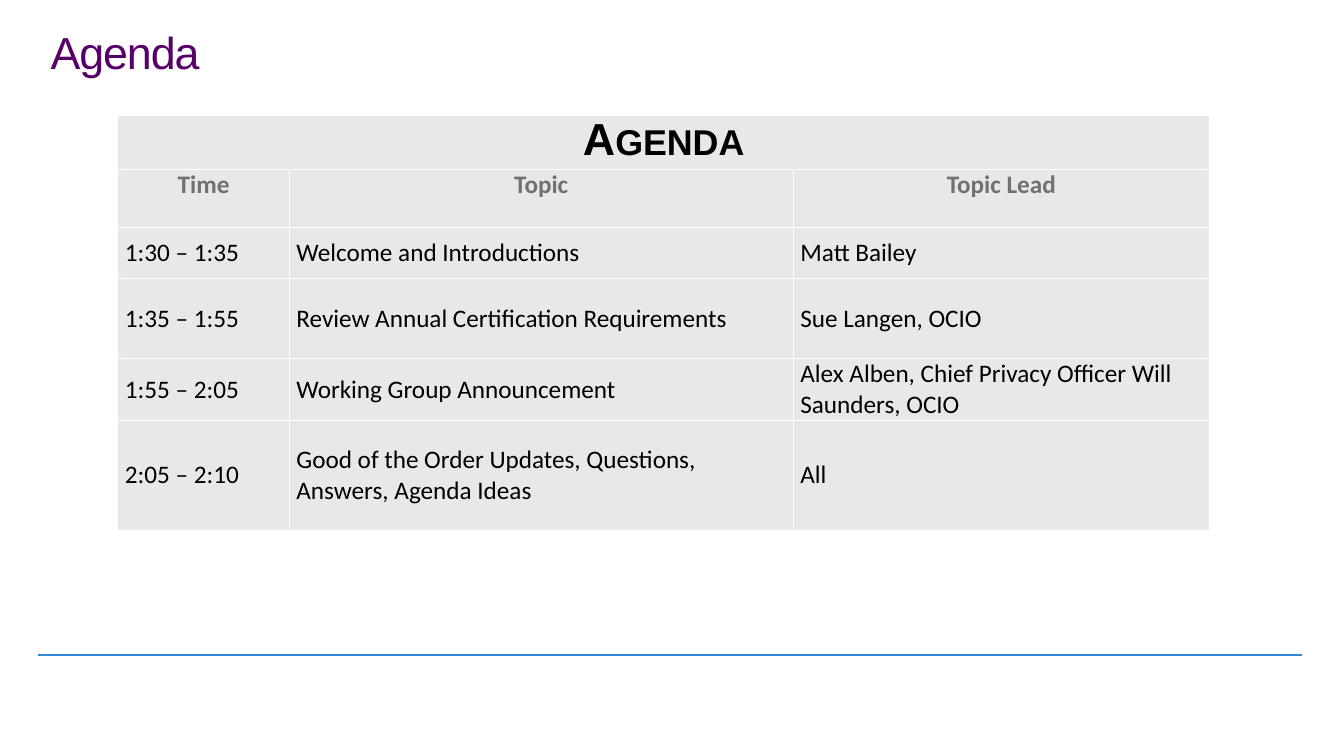
from dataclasses import dataclass

import pptx
import pptx.dml.color
import pptx.enum.shapes
import pptx.enum.text
import pptx.oxml
import pptx.oxml.ns
import pptx.util

Cm = pptx.util.Cm
Pt = pptx.util.Pt
ALIGN = pptx.enum.text.PP_ALIGN
ANCHOR = pptx.enum.text.MSO_ANCHOR


@dataclass(frozen=True)
class Theme:
    title: str = "580069"
    rule: str = "3388D5"
    cell: str = "EAE7EB"
    border: str = "FFFFFF"
    header: str = "717073"
    text: str = "000000"
    heading_font: str = "Arial"
    body_font: str = "Calibri"
    heading_size: int = 32
    body_size: int = 18


THEME = Theme()

HEADERS = ("Time", "Topic", "Topic Lead")
SESSIONS = (
    ("1:30 – 1:35", "Welcome and Introductions", "Matt Bailey"),
    ("1:35 – 1:55", "Review Annual Certification Requirements", "Sue Langen, OCIO"),
    ("1:55 – 2:05", "Working Group Announcement",
     "Alex Alben, Chief Privacy Officer Will Saunders, OCIO"),
    ("2:05 – 2:10", "Good of the Order Updates, Questions, Answers, Agenda Ideas", "All"),
)
COL_WIDTHS = (4.32, 12.7, 10.49)
ROW_HEIGHTS = (1.37, 1.47, 1.27, 2.03, 1.53, 2.77)


def rgb(value):
    return pptx.dml.color.RGBColor.from_string(value)


def format_run(r, font, size, color, bold=False):
    r.font.name = font
    r.font.size = Pt(size)
    r.font.color.rgb = rgb(color)
    r.font.bold = bold


def add_title(slide, text):
    sp = slide.shapes.title
    sp.left, sp.top, sp.width, sp.height = Cm(1.02), Cm(0.64), Cm(20.98), Cm(2.49)
    tf = sp.text_frame
    tf.text = text
    tf.vertical_anchor = ANCHOR.TOP
    tf.auto_size = pptx.enum.text.MSO_AUTO_SIZE.NONE
    p = tf.paragraphs[0]
    p.alignment = ALIGN.LEFT
    p.line_spacing = 0.9
    r = p.runs[0]
    format_run(r, THEME.heading_font, THEME.heading_size, THEME.title)
    r.font._element.set("spc", "-80")


def add_rule(slide):
    line = slide.shapes.add_connector(
        pptx.enum.shapes.MSO_CONNECTOR.STRAIGHT, Cm(0.97), Cm(16.51), Cm(32.82), Cm(16.51))
    line.line.color.rgb = rgb(THEME.rule)
    line.line.width = Pt(1.5)
    effects = pptx.oxml.parse_xml(f'<a:effectLst {pptx.oxml.ns.nsdecls("a")}/>')
    line._element.spPr.append(effects)


def style_cell(cell, inset):
    """Draw the borders, fill and side margins of a cell."""
    tcPr = cell._tc.get_or_add_tcPr()
    for side in "LRTB":
        tcPr.append(pptx.oxml.parse_xml(
            f'<a:ln{side} {pptx.oxml.ns.nsdecls("a")} w="{Pt(1)}"><a:solidFill>'
            f'<a:srgbClr val="{THEME.border}"/></a:solidFill></a:ln{side}>'))
    cell.fill.solid()
    cell.fill.fore_color.rgb = rgb(THEME.cell)
    cell.margin_left = cell.margin_right = Cm(inset)
    cell.margin_top = cell.margin_bottom = 0


def write_cell(cell, text, align, anchor, **font):
    cell.text_frame.text = text
    cell.vertical_anchor = anchor
    p = cell.text_frame.paragraphs[0]
    p.alignment = align
    format_run(p.runs[0], **font)


def add_agenda_table(slide):
    table = slide.shapes.add_table(
        len(ROW_HEIGHTS), len(COL_WIDTHS), Cm(2.97), Cm(2.9),
        Cm(sum(COL_WIDTHS)), Cm(sum(ROW_HEIGHTS))).table
    table.first_row = table.horz_banding = False
    for column, width in zip(table.columns, COL_WIDTHS):
        column.width = Cm(width)
    for i, (row, height) in enumerate(zip(table.rows, ROW_HEIGHTS)):
        row.height = Cm(height)
        for cell in row.cells:
            style_cell(cell, 0.13 if i == 0 else 0.18)

    heading = table.cell(0, 0)
    heading.merge(table.cell(0, len(COL_WIDTHS) - 1))
    write_cell(heading, "Agenda", ALIGN.CENTER, ANCHOR.TOP, font=THEME.heading_font,
               size=THEME.heading_size, color=THEME.text, bold=True)
    heading.text_frame.paragraphs[0].runs[0].font._element.set("cap", "small")

    body = {"font": THEME.body_font, "size": THEME.body_size}
    for col, text in enumerate(HEADERS):
        write_cell(table.cell(1, col), text, ALIGN.CENTER, ANCHOR.TOP,
                   color=THEME.header, bold=True, **body)
    for row, session in enumerate(SESSIONS, start=2):
        for col, text in enumerate(session):
            write_cell(table.cell(row, col), text, ALIGN.LEFT, ANCHOR.MIDDLE,
                       color=THEME.text, **body)


def main():
    prs = pptx.Presentation()
    prs.slide_width, prs.slide_height = Cm(33.87), Cm(19.05)
    slide = prs.slides.add_slide(prs.slide_layouts.get_by_name("Title Only"))
    add_rule(slide)
    add_title(slide, "Agenda")
    add_agenda_table(slide)
    prs.save("out.pptx")


if __name__ == "__main__":
    main()
